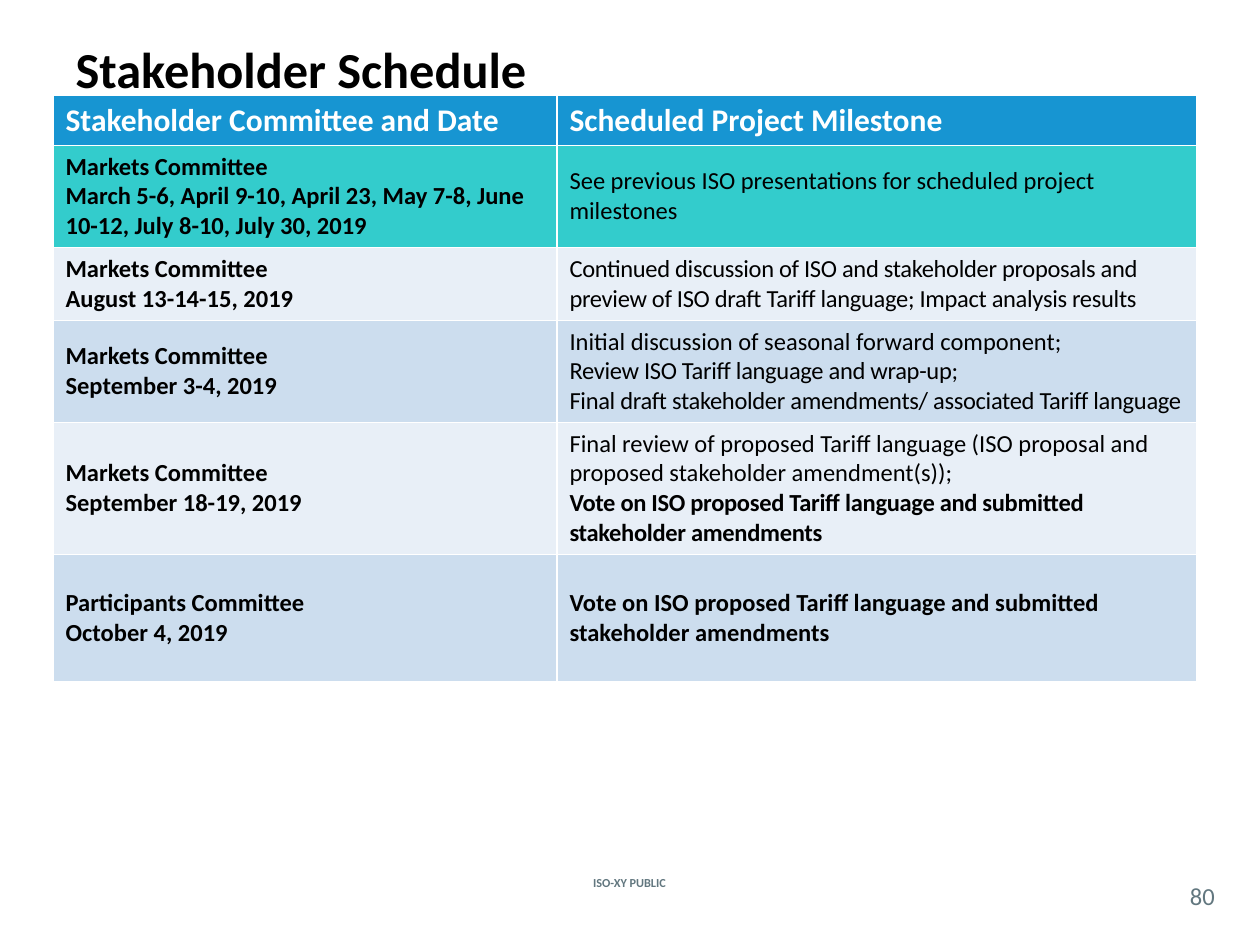
from pptx import Presentation
from pptx.dml.color import RGBColor
from pptx.enum.text import MSO_ANCHOR as Anchor, PP_ALIGN as Align
from pptx.util import Pt

PX = 914400 // 126
FONT = "Calibri"
BLACK = RGBColor(0x00, 0x00, 0x00)
WHITE = RGBColor(0xFF, 0xFF, 0xFF)
SLATE = RGBColor(0x62, 0x77, 0x7F)
BLUE = RGBColor(0x17, 0x95, 0xD2)
TEAL = RGBColor(0x33, 0xCC, 0xCC)
PALE = RGBColor(0xE8, 0xEF, 0xF7)
LIGHT_BLUE = RGBColor(0xCC, 0xDD, 0xEE)

PLAIN, BOLD = (False, 0), (True, 0)
TIGHT, BOLD_TIGHT = (False, -20), (True, -20)

TITLE = "Stakeholder Schedule"
HEADINGS = ["Stakeholder Committee and Date", "Scheduled Project Milestone"]
VOTE = "Vote on ISO proposed Tariff language and submitted stakeholder amendments"
MEETINGS = [
    (102, TEAL, "Markets Committee",
     "March 5-6, April 9-10, April 23, May 7-8, June 10-12, July 8-10, July 30, 2019",
     [("See previous ISO presentations for scheduled project milestones", PLAIN)]),
    (73, PALE, "Markets Committee", "August 13-14-15, 2019",
     [("Continued discussion of ISO and stakeholder proposals and preview of "
       "ISO draft Tariff language; Impact analysis results", TIGHT)]),
    (102, LIGHT_BLUE, "Markets Committee", "September 3-4, 2019",
     [("Initial discussion of seasonal forward component;", PLAIN),
      ("Review ISO Tariff language and wrap-up;", TIGHT),
      ("Final draft stakeholder amendments/ associated Tariff language", TIGHT)]),
    (132, PALE, "Markets Committee", "September 18-19, 2019",
     [("Final review of proposed Tariff language (ISO proposal and proposed "
       "stakeholder amendment(s));", PLAIN),
      (VOTE, BOLD_TIGHT)]),
    (127, LIGHT_BLUE, "Participants Committee", "October 4, 2019", [(VOTE, BOLD)]),
]
HEADER_HEIGHT = 50
COLUMN_WIDTHS = [504, 640]
FOOTERS = [
    ("ISO-XY PUBLIC", (537, 866, 185, 34), 7, True),
    ("80", (1176, 877, 53, 37), 14, False),
]


def emu(*lengths):
    return [length * PX for length in lengths]


def write(frame, lines, size, color, align=Align.LEFT):
    frame.text = "\n".join(text for text, style in lines)
    for paragraph, (text, (bold, spacing)) in zip(frame.paragraphs, lines):
        paragraph.alignment = align
        for run in paragraph.runs:
            font = run.font
            font.name, font.size, font.bold = FONT, Pt(size), bold
            font.color.rgb = color
            if spacing:
                run._r.get_or_add_rPr().set("spc", str(spacing))


def fill_cell(cell, lines, size, color, background):
    cell.fill.solid()
    cell.fill.fore_color.rgb = background
    cell.vertical_anchor = Anchor.MIDDLE
    write(cell.text_frame, lines, size, color)


deck = Presentation()
deck.slide_width, deck.slide_height = emu(1260, 945)
slide = deck.slides.add_slide(deck.slide_layouts[5])

title = slide.shapes.title
title.left, title.top, title.width, title.height = emu(63, 32, 1134, 73)
title.text_frame.vertical_anchor = Anchor.MIDDLE
write(title.text_frame, [(TITLE, BOLD)], 28.8, BLACK)

for text, place, size, bold in FOOTERS:
    frame = slide.shapes.add_textbox(*emu(*place)).text_frame
    frame.word_wrap = True
    frame.vertical_anchor = Anchor.MIDDLE
    frame.margin_left = frame.margin_right = frame.margin_top = frame.margin_bottom = 0
    write(frame, [(text, (bold, 0))], size, SLATE, Align.CENTER)

heights = [HEADER_HEIGHT] + [meeting[0] for meeting in MEETINGS]
schedule = slide.shapes.add_table(
    len(heights), len(COLUMN_WIDTHS),
    *emu(53, 95, sum(COLUMN_WIDTHS), sum(heights))).table
for column, width in zip(schedule.columns, emu(*COLUMN_WIDTHS)):
    column.width = width
for row, height in zip(schedule.rows, emu(*heights)):
    row.height = height

for column, heading in enumerate(HEADINGS):
    fill_cell(schedule.cell(0, column), [(heading, BOLD)], 18, WHITE, BLUE)
for row, (height, background, committee, date, milestones) in enumerate(MEETINGS, 1):
    meeting_lines = [(committee, BOLD), (date, BOLD)]
    for column, lines in enumerate([meeting_lines, milestones]):
        fill_cell(schedule.cell(row, column), lines, 14, BLACK, background)

deck.save("out.pptx")
